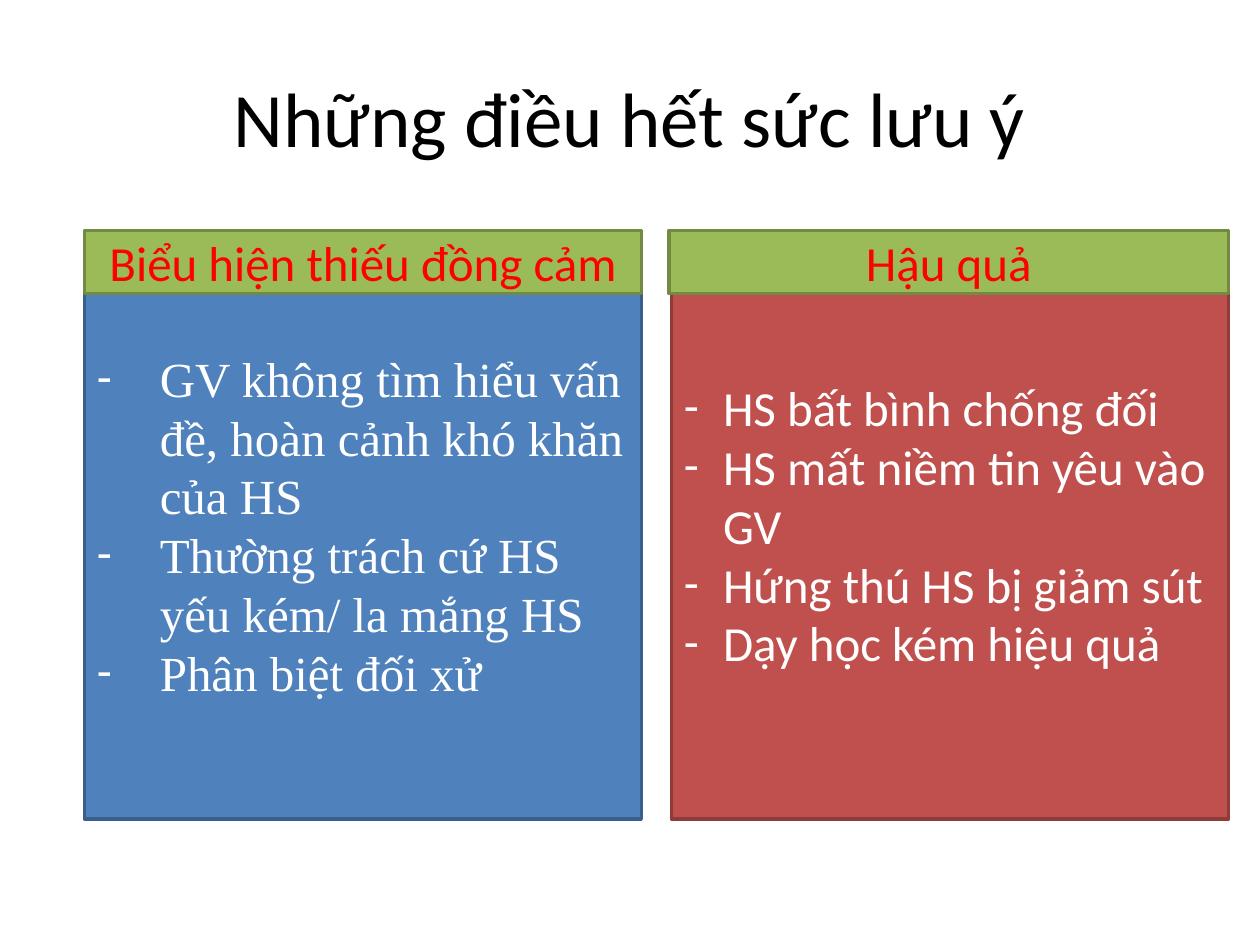
"""Builds the slide that sets signs of missing empathy beside their consequences."""
from dataclasses import dataclass
from typing import Any

from lxml.etree import SubElement
from pptx import Presentation
from pptx.dml.color import RGBColor as Rgb
from pptx.enum.shapes import MSO_SHAPE as Shape
from pptx.enum.text import MSO_ANCHOR as Anchor, PP_ALIGN as Align
from pptx.oxml.ns import qn
from pptx.util import Inches, Pt

COLORS = {
    "black": "000000", "white": "FFFFFF", "red": "FF0000",
    "blue": "4F81BD", "blue_edge": "3A5F8C",
    "brick": "C0504D", "brick_edge": "8E3B39",
    "green": "9BBB59", "green_edge": "738A42",
}

TOP, PANEL_HEIGHT, HEADER_HEIGHT, PANEL_WIDTH = 1.83, 4.67, 0.5, 4.42

COLUMNS = [
    {
        "panel_left": 0.67, "header_left": 0.67, "header_width": 4.42,
        "color": "blue", "font": "Times New Roman", "indent": 0.5,
        "header": "Biểu hiện thiếu đồng cảm",
        "items": [
            "GV không tìm hiểu vấn đề, hoàn cảnh khó khăn của HS",
            "Thường trách cứ HS yếu kém/ la mắng HS",
            "Phân biệt đối xử",
        ],
    },
    {
        "panel_left": 5.33, "header_left": 5.31, "header_width": 4.44,
        "color": "brick", "font": "Calibri", "indent": 0.31,
        "header": "Hậu quả",
        "items": [
            "HS bất bình chống đối",
            "HS mất niềm tin yêu vào GV",
            "Hứng thú HS bị giảm sút",
            "Dạy học kém hiệu quả",
        ],
    },
]


@dataclass
class SlideBuilder:
    """Holds the style and the current slide."""

    page: Any
    font: str = "Calibri"
    title_size: int = 44
    body_size: int = 28
    line_width: int = 2

    def add_text(self, shape, lines, size, color, font=None, align=Align.CENTER, indent=0):
        """Fills a shape with paragraphs, bulleted when an indent is given."""
        frame = shape.text_frame
        frame.word_wrap = True
        frame.vertical_anchor = Anchor.MIDDLE
        style = {"name": font or self.font, "size": Pt(size), "bold": False}
        for index, line in enumerate(lines):
            para = frame.add_paragraph() if index else frame.paragraphs[0]
            para.alignment = align
            span = para.add_run()
            span.text = line
            for name, value in style.items():
                setattr(span.font, name, value)
            span.font.color.rgb = Rgb.from_string(COLORS[color])
            if indent:
                self.bullet(para, indent)

    def bullet(self, para, indent):
        """Gives a paragraph a hanging dash."""
        properties = para._p.get_or_add_pPr()
        properties.set("marL", str(Inches(indent)))
        properties.set("indent", str(-Inches(indent)))
        SubElement(properties, qn("a:buFont"), typeface=self.font)
        SubElement(properties, qn("a:buChar"), char="-")

    def title(self, text, left, top, width, height):
        """Places and formats the title placeholder."""
        box = self.page.shapes.title
        place = {"left": left, "top": top, "width": width, "height": height}
        for name, value in place.items():
            setattr(box, name, Inches(value))
        self.add_text(box, [text], self.title_size, "black")

    def rectangle(self, left, top, width, height, color):
        """Adds a filled rectangle with a darker edge."""
        place = (Inches(value) for value in (left, top, width, height))
        box = self.page.shapes.add_shape(Shape.RECTANGLE, *place)
        box.shadow.inherit = False
        box.fill.solid()
        box.fill.fore_color.rgb = Rgb.from_string(COLORS[color])
        box.line.color.rgb = Rgb.from_string(COLORS[f"{color}_edge"])
        box.line.width = Pt(self.line_width)
        return box

    def panel(self, column):
        """Adds the bulleted body of a column."""
        box = self.rectangle(
            column["panel_left"], TOP, PANEL_WIDTH, PANEL_HEIGHT, column["color"]
        )
        self.add_text(box, column["items"], self.body_size, "white",
                      column["font"], Align.LEFT, column["indent"])

    def header(self, column):
        """Adds the heading band of a column."""
        box = self.rectangle(
            column["header_left"], TOP, column["header_width"], HEADER_HEIGHT, "green"
        )
        self.add_text(box, [column["header"]], self.body_size, "red")


def main():
    """Builds and saves the deck."""
    deck = Presentation()
    deck.slide_width, deck.slide_height = Inches(10), Inches(7.5)
    builder = SlideBuilder(deck.slides.add_slide(deck.slide_layouts[5]))
    builder.title("Những điều hết sức lưu ý", 0.5, 0.3, 9, 1.25)
    for add in (builder.panel, builder.header):
        for column in COLUMNS:
            add(column)
    deck.save("out.pptx")


if __name__ == "__main__":
    main()
